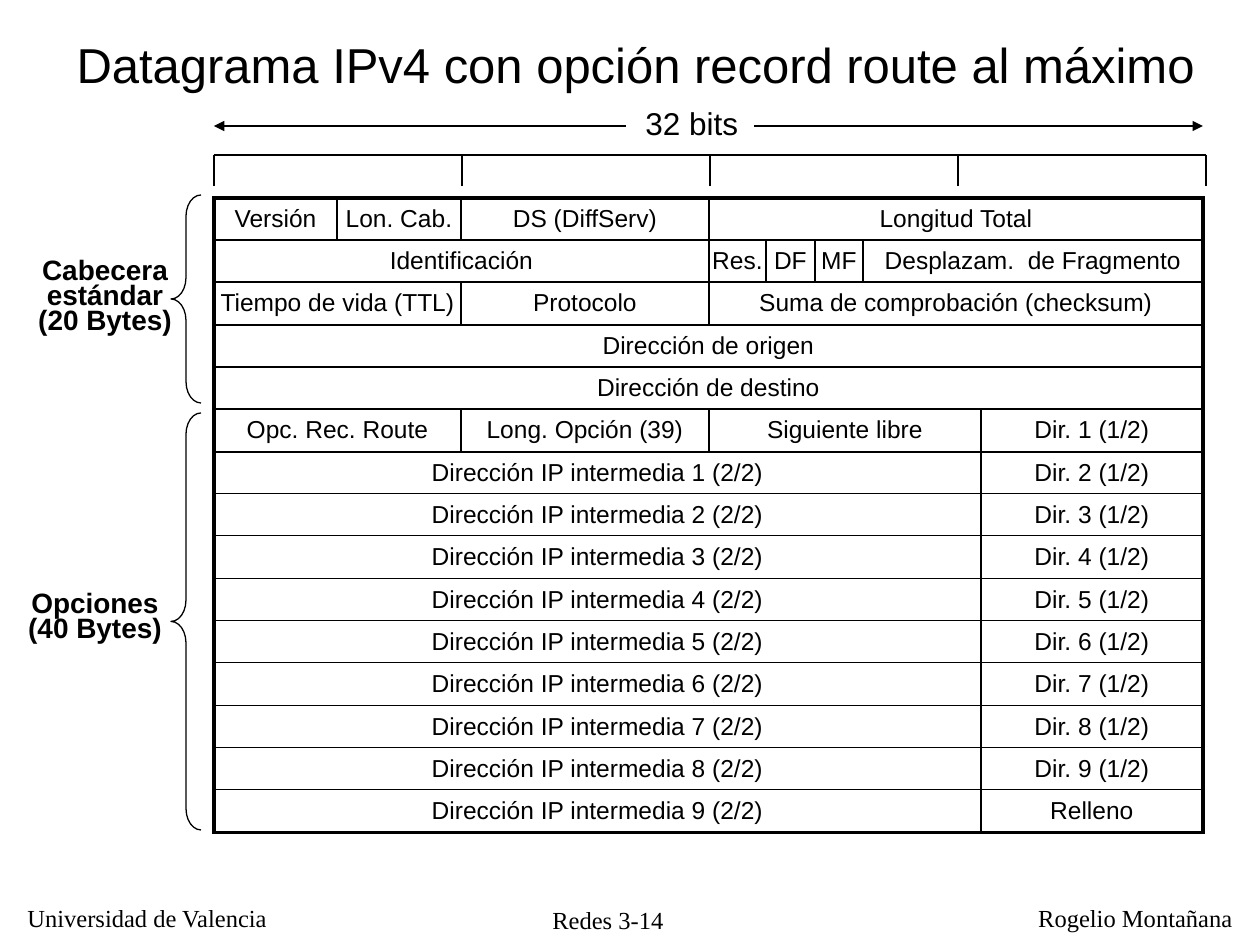
from lxml.etree import SubElement
from pptx import Presentation
from pptx.dml.color import RGBColor
from pptx.enum.shapes import MSO_CONNECTOR, MSO_SHAPE
from pptx.enum.text import MSO_ANCHOR, PP_ALIGN
from pptx.oxml import parse_xml
from pptx.oxml.ns import nsdecls, qn
from pptx.util import Pt

SCALE = 914400 / 126
BLACK = RGBColor(0, 0, 0)
SANS = "Arial"
SERIF = "Times New Roman"
COLS = [123, 124, 248, 57, 49, 48, 118, 222]
HIGH = 635
LEFT, TOP = 214, 198
RIGHT = LEFT + sum(COLS)


def px(num):
    return round(num * SCALE)


class Page:
    def __init__(self, deck):
        self.slide = deck.slides.add_slide(deck.slide_layouts[5])
        self.shapes = self.slide.shapes

    def style(self, frame, size, font=SANS, bold=False, align=PP_ALIGN.LEFT, lead=None):
        for para in frame.paragraphs:
            para.alignment = align
            if lead:
                para.line_spacing = lead
            for run in para.runs:
                run.font.name = font
                run.font.size = Pt(size)
                run.font.bold = bold
                run.font.color.rgb = BLACK

    def title(self, text, x, y, w, h):
        head = self.shapes.title
        head.left, head.top, head.width, head.height = map(px, (x, y, w, h))
        head.text_frame.text = text
        head.text_frame.vertical_anchor = MSO_ANCHOR.MIDDLE
        self.style(head.text_frame, 28)

    def text(self, text, x, y, w, h, size, **look):
        frame = self.shapes.add_textbox(*map(px, (x, y, w, h))).text_frame
        frame.word_wrap = False
        frame.text = text
        self.style(frame, size, **look)

    def line(self, x1, y1, x2, y2, width=0.75, arrow=False):
        line = self.shapes.add_connector(MSO_CONNECTOR.STRAIGHT, *map(px, (x1, y1, x2, y2)))
        line.line.color.rgb = BLACK
        line.line.width = Pt(width)
        if arrow:
            SubElement(line.line._get_or_add_ln(), qn("a:tailEnd"), type="triangle")
        SubElement(line._element.spPr, qn("a:effectLst"))

    def brace(self, x, y, w, h):
        brace = self.shapes.add_shape(MSO_SHAPE.LEFT_BRACE, *map(px, (x, y, w, h)))
        brace.adjustments[0] = 0.71
        brace.shadow.inherit = False
        brace.fill.background()
        brace.line.color.rgb = BLACK
        brace.line.width = Pt(0.75)

    def border(self, cell, thick):
        props = cell._tc.get_or_add_tcPr()
        for spot, (side, bold) in enumerate(zip("LRTB", thick)):
            width = Pt(2.25 if bold else 1)
            props.insert(spot, parse_xml(
                f'<a:ln{side} {nsdecls("a")} w="{width}"><a:solidFill>'
                f'<a:srgbClr val="{BLACK}"/></a:solidFill></a:ln{side}>'))

    def table(self, rows):
        count = len(rows)
        grid = self.shapes.add_table(
            count, len(COLS), *map(px, (LEFT, TOP, sum(COLS), HIGH))).table
        grid.first_row = grid.horz_banding = False
        for col, width in zip(grid.columns, COLS):
            col.width = px(width)
        for i, row in enumerate(rows):
            grid.rows[i].height = px(HIGH * (i + 1) // count - HIGH * i // count)
            start = 0
            for text, span in row:
                end = start + span - 1
                first = grid.cell(i, start)
                if span > 1:
                    first.merge(grid.cell(i, end))
                first.text_frame.text = text
                self.style(first.text_frame, 14, align=PP_ALIGN.CENTER)
                thick = (start == 0, end == len(COLS) - 1, i == 0, i == count - 1)
                for j in range(start, end + 1):
                    cell = grid.cell(i, j)
                    cell.margin_left = cell.margin_right = px(2)
                    cell.margin_top = cell.margin_bottom = px(5)
                    cell.vertical_anchor = MSO_ANCHOR.MIDDLE
                    cell.fill.background()
                    self.border(cell, thick)
                start = end + 1


def main():
    deck = Presentation()
    deck.slide_width, deck.slide_height = px(1260), px(945)
    page = Page(deck)

    page.text("Redes 3-14", 526, 899, 164, 38, 14, font=SERIF, align=PP_ALIGN.CENTER)
    page.text("Universidad de Valencia", 15, 897, 268, 42, 14, font=SERIF)
    page.text("Rogelio Montañana", 1015, 897, 230, 42, 14, font=SERIF, align=PP_ALIGN.RIGHT)

    page.title("Datagrama IPv4 con opción record route al máximo", 64, 28, 1150, 72)
    page.text("32 bits", 633, 98, 119, 50, 18)
    page.line(626, 126, LEFT, 126, arrow=True)
    page.line(754, 126, RIGHT, 126, arrow=True)
    page.line(LEFT, 155, 1206, 155)
    for i in range(5):
        x = LEFT + 248 * i
        page.line(x, 155, x, 186)

    rows = [
        [("Versión", 1), ("Lon. Cab.", 1), ("DS (DiffServ)", 1), ("Longitud Total", 5)],
        [("Identificación", 3), ("Res.", 1), ("DF", 1), ("MF", 1),
         ("Desplazam.  de Fragmento", 2)],
        [("Tiempo de vida (TTL)", 2), ("Protocolo", 1),
         ("Suma de comprobación (checksum)", 5)],
        [("Dirección de origen", 8)],
        [("Dirección de destino", 8)],
        [("Opc. Rec. Route", 2), ("Long. Opción (39)", 1), ("Siguiente libre", 4),
         ("Dir. 1 (1/2)", 1)],
    ]
    for i in range(1, 10):
        last = f"Dir. {i + 1} (1/2)" if i < 9 else "Relleno"
        rows.append([(f"Dirección IP intermedia {i} (2/2)", 7), (last, 1)])
    page.table(rows)

    side = dict(size=16, bold=True, align=PP_ALIGN.CENTER, lead=0.75)
    page.text("Cabecera\nestándar\n(20 Bytes)", 25, 254, 160, 90, **side)
    page.brace(171, 413, 30, 417)
    for x in (LEFT, RIGHT):
        page.line(x, 408, x, 517, 2)
    page.brace(171, 195, 30, 208)
    page.text("Opciones\n(40 Bytes)", 15, 587, 160, 63, **side)

    deck.save("out.pptx")


if __name__ == "__main__":
    main()
